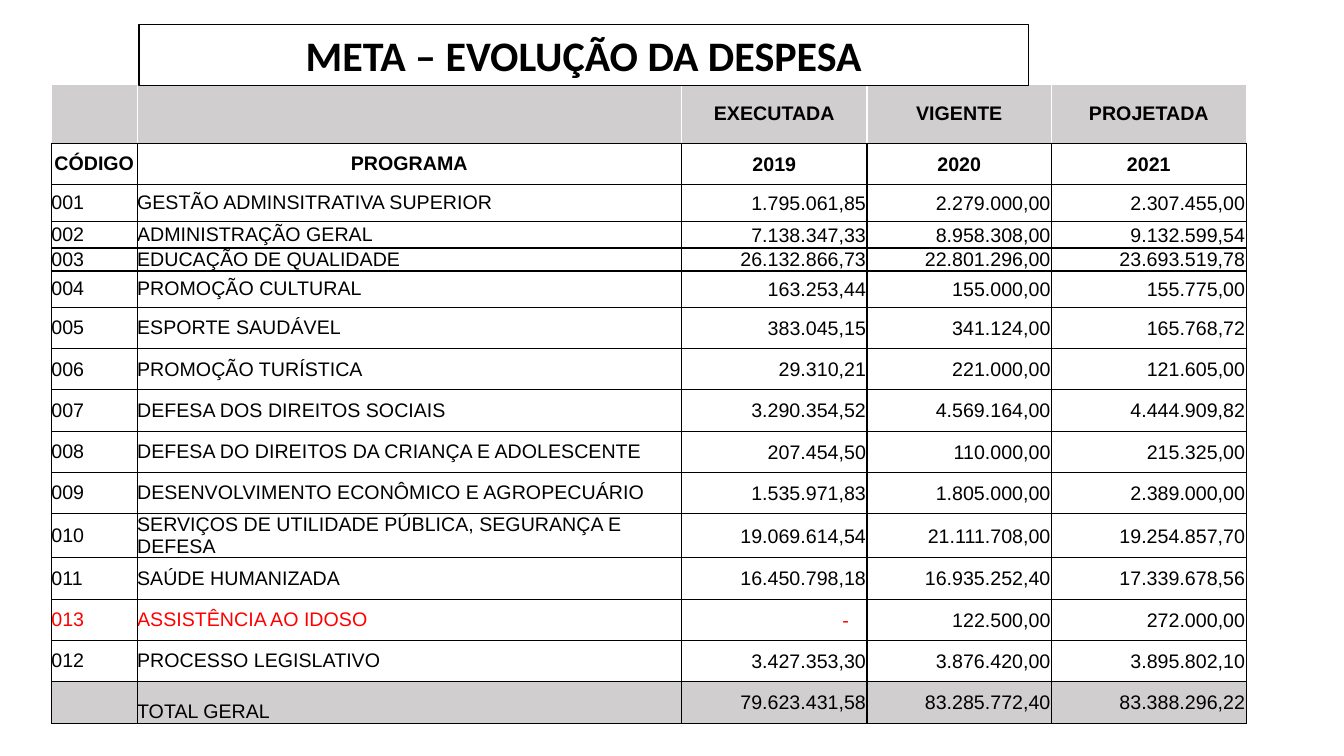
import pptx
import pptx.dml.color
import pptx.enum.shapes
import pptx.enum.text
import pptx.oxml.ns
import pptx.util
from lxml import etree

Inches = pptx.util.Inches
RGBColor = pptx.dml.color.RGBColor
ALIGN = pptx.enum.text.PP_ALIGN
ANCHOR = pptx.enum.text.MSO_ANCHOR

BLACK = RGBColor(0x00, 0x00, 0x00)
WHITE = RGBColor(0xFF, 0xFF, 0xFF)
GREY = RGBColor(0xD0, 0xCE, 0xCE)
RED = RGBColor(0xFF, 0x00, 0x00)

TABLE_LEFT, TABLE_TOP = 0.51, 0.84
COLUMN_WIDTHS = [0.85, 5.4, 1.84, 1.83, 1.93]
ROW_HEIGHTS = [0.58, 0.41, 0.37, 0.26, 0.22, 0.36] + [0.41] * 10
HEADER_ROWS = 2
DASH_INDENT = 0.18

EXPENSES = [
    ("", "", "EXECUTADA", "VIGENTE", "PROJETADA"),
    ("CÓDIGO", "PROGRAMA", "2019", "2020", "2021"),
    ("001", "GESTÃO ADMINSITRATIVA SUPERIOR", "1.795.061,85", "2.279.000,00", "2.307.455,00"),
    ("002", "ADMINISTRAÇÃO GERAL", "7.138.347,33", "8.958.308,00", "9.132.599,54"),
    ("003", "EDUCAÇÃO DE QUALIDADE", "26.132.866,73", "22.801.296,00", "23.693.519,78"),
    ("004", "PROMOÇÃO CULTURAL", "163.253,44", "155.000,00", "155.775,00"),
    ("005", "ESPORTE SAUDÁVEL", "383.045,15", "341.124,00", "165.768,72"),
    ("006", "PROMOÇÃO TURÍSTICA", "29.310,21", "221.000,00", "121.605,00"),
    ("007", "DEFESA DOS DIREITOS SOCIAIS", "3.290.354,52", "4.569.164,00", "4.444.909,82"),
    ("008", "DEFESA DO DIREITOS DA CRIANÇA E ADOLESCENTE", "207.454,50", "110.000,00", "215.325,00"),
    ("009", "DESENVOLVIMENTO ECONÔMICO E AGROPECUÁRIO", "1.535.971,83", "1.805.000,00", "2.389.000,00"),
    ("010", "SERVIÇOS DE UTILIDADE PÚBLICA, SEGURANÇA E DEFESA",
     "19.069.614,54", "21.111.708,00", "19.254.857,70"),
    ("011", "SAÚDE HUMANIZADA", "16.450.798,18", "16.935.252,40", "17.339.678,56"),
    ("013", "ASSISTÊNCIA AO IDOSO", "-", "122.500,00", "272.000,00"),
    ("012", "PROCESSO LEGISLATIVO", "3.427.353,30", "3.876.420,00", "3.895.802,10"),
    ("", "TOTAL GERAL", "79.623.431,58", "83.285.772,40", "83.388.296,22"),
]
NEW_PROGRAM_ROW = 13
TOTAL_ROW = len(EXPENSES) - 1


def write_text(text_frame, text, font="Arial", size=14, color=BLACK, bold=False, align=ALIGN.LEFT):
    paragraph = text_frame.paragraphs[0]
    paragraph.alignment = align
    if not text:
        paragraph.font.size = pptx.util.Pt(size)
        return
    run = paragraph.add_run()
    run.text = text
    run.font.name = font
    run.font.size = pptx.util.Pt(size)
    run.font.bold = bold
    run.font.color.rgb = color


def set_borders(cell, **side_colors):
    """Draw 1 pt borders; sides are given in schema order as L, R, T, B."""
    properties = cell._tc.get_or_add_tcPr()
    qualified = pptx.oxml.ns.qn
    for side, color in side_colors.items():
        line = etree.SubElement(properties, qualified(f"a:ln{side}"), w=str(pptx.util.Pt(1)))
        fill = etree.SubElement(line, qualified("a:solidFill"))
        etree.SubElement(fill, qualified("a:srgbClr"), val=str(color))


def format_cell(cell, row, column):
    edge = WHITE if row == 0 else BLACK
    set_borders(cell, L=edge, R=edge, T=edge, B=BLACK)
    if row in (0, TOTAL_ROW):
        cell.fill.solid()
        cell.fill.fore_color.rgb = GREY
    else:
        cell.fill.background()
    is_amount = row > 0 and column > 1
    margin = Inches(0.01 if is_amount else 0)
    cell.margin_left = cell.margin_right = cell.margin_top = margin
    cell.margin_bottom = 0
    is_total_label = (row, column) == (TOTAL_ROW, 1)
    cell.vertical_anchor = ANCHOR.BOTTOM if is_total_label else ANCHOR.MIDDLE


def fill_cell(cell, text, row, column):
    is_header = row < HEADER_ROWS
    is_new = row == NEW_PROGRAM_ROW and column < 3
    if is_header:
        align = ALIGN.CENTER
    else:
        align = ALIGN.RIGHT if column > 1 else ALIGN.LEFT
    format_cell(cell, row, column)
    if text == "-":
        cell.margin_right = Inches(DASH_INDENT)
    write_text(cell.text_frame, text, color=RED if is_new else BLACK, bold=is_header, align=align)


def add_expense_table(slide):
    frame = slide.shapes.add_table(
        len(ROW_HEIGHTS), len(COLUMN_WIDTHS), Inches(TABLE_LEFT), Inches(TABLE_TOP),
        Inches(sum(COLUMN_WIDTHS)), Inches(sum(ROW_HEIGHTS)))
    table = frame.table
    table.first_row = table.horz_banding = False
    for column, width in zip(table.columns, COLUMN_WIDTHS):
        column.width = Inches(width)
    for row, height in zip(table.rows, ROW_HEIGHTS):
        row.height = Inches(height)
    for row, texts in enumerate(EXPENSES):
        for column, text in enumerate(texts):
            fill_cell(table.cell(row, column), text, row, column)


def add_title(slide, text):
    shape = slide.shapes.add_shape(
        pptx.enum.shapes.MSO_SHAPE.RECTANGLE,
        Inches(1.38), Inches(0.24), Inches(8.82), Inches(0.61))
    shape.shadow.inherit = False
    shape.fill.solid()
    shape.fill.fore_color.rgb = WHITE
    shape.line.color.rgb = BLACK
    shape.line.width = pptx.util.Pt(1)
    shape.text_frame.word_wrap = True
    shape.text_frame.auto_size = pptx.enum.text.MSO_AUTO_SIZE.SHAPE_TO_FIT_TEXT
    write_text(shape.text_frame, text, font="Calibri", size=30, bold=True, align=ALIGN.CENTER)


def main():
    presentation = pptx.Presentation()
    presentation.slide_width = Inches(13.33)
    presentation.slide_height = Inches(7.5)
    slide = presentation.slides.add_slide(presentation.slide_layouts[6])
    add_expense_table(slide)
    add_title(slide, "META – EVOLUÇÃO DA DESPESA")
    presentation.save("out.pptx")


if __name__ == "__main__":
    main()
